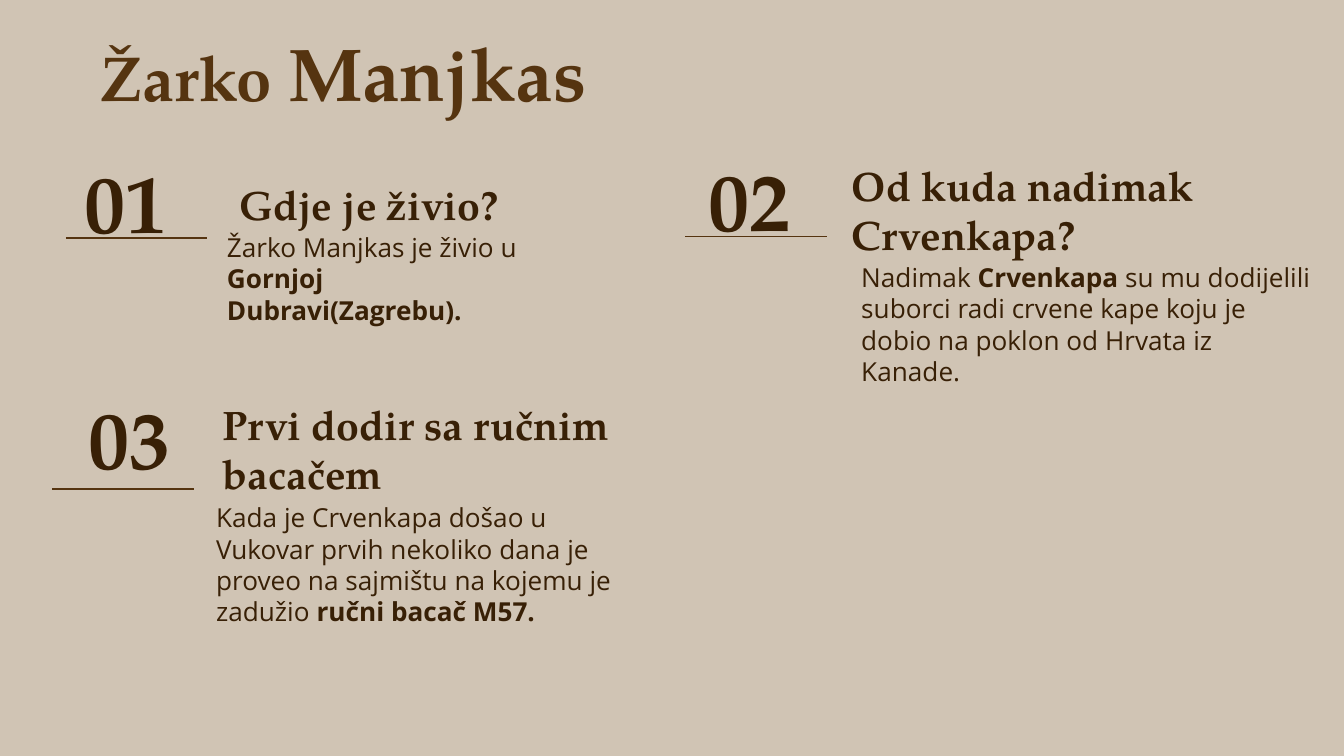
from lxml.etree import SubElement
from pptx import Presentation
from pptx.dml.color import RGBColor
from pptx.enum.shapes import MSO_CONNECTOR as CONNECTOR
from pptx.enum.text import MSO_ANCHOR as ANCHOR, PP_ALIGN as ALIGN
from pptx.oxml.ns import qn
from pptx.util import Inches, Pt

COLORS = {"background": "D0C4B4", "accent": "553410", "text": "382006"}
SERIF, SANS = "TeX Gyre Pagella", "Open Sans"

# Content: runs are (text, size, bold); places are left, top, width in inches
TITLE = [("Žarko ", 34, True), ("Manjkas", 40, True)]
SECTIONS = [
    {
        "number": "01", "number_at": (0.36, 0.92), "rule_at": (0.49, 1.77),
        "heading": "Gdje je živio?", "heading_at": (1.68, 1.23, 2.71),
        "body": [("Žarko Manjkas je živio u ", 14, False),
                 ("Gornjoj Dubravi(Zagrebu).", 14, True)],
        "body_at": (1.59, 1.78, 2.71),
    },
    {
        "number": "02", "number_at": (5, 0.9), "rule_at": (5.1, 1.76),
        "heading": "Od kuda nadimak Crvenkapa?", "heading_at": (6.24, 1.27, 4.11),
        "body": [("Nadimak ", 14, False), ("Crvenkapa", 14, True),
                 (" su mu dodijelili suborci radi crvene kape koju je dobio "
                  "na poklon od Hrvata iz Kanade.", 14, False)],
        "body_at": (6.31, 2.12, 3.6),
    },
    {
        "number": "03", "number_at": (0.39, 2.67), "rule_at": (0.39, 3.64),
        "heading": "Prvi dodir sa ručnim bacačem", "heading_at": (1.56, 3.05, 3.72),
        "body": [("Kada je Crvenkapa došao u Vukovar prvih nekoliko dana je "
                  "proveo na sajmištu na kojemu je zadužio ", 14, False),
                 ("ručni bacač M57.", 14, True)],
        "body_at": (1.51, 3.91, 3.43),
    },
]
SLIDE_WIDTH = 10
SLIDE_HEIGHT = SLIDE_WIDTH * 9 / 16
NUMBER_SIDE, TEXT_HEIGHT, RULE_LENGTH = 1.15, 0.58, 1.05


def add_text(slide, place, runs, font, color="text", align=ALIGN.LEFT, anchor=ANCHOR.MIDDLE):
    box = slide.shapes.add_textbox(*(Inches(v) for v in place))
    frame = box.text_frame
    frame.word_wrap = True
    frame.vertical_anchor = anchor
    frame.margin_left = frame.margin_right = Inches(0.1)
    frame.margin_top = frame.margin_bottom = Inches(0.1)
    paragraph = frame.paragraphs[0]
    paragraph.alignment = align
    for text, size, bold in runs:
        run = paragraph.add_run()
        run.text = text
        run.font.name = font
        run.font.size = Pt(size)
        run.font.bold = bold
        run.font.color.rgb = RGBColor.from_string(COLORS[color])


def add_rule(slide, left, top):
    rule = slide.shapes.add_connector(
        CONNECTOR.STRAIGHT, Inches(left), Inches(top), Inches(left + RULE_LENGTH), Inches(top))
    rule.line.color.rgb = RGBColor.from_string(COLORS["accent"])
    rule.line.width = Pt(0.75)
    SubElement(rule.element.spPr, qn("a:effectLst"))


prs = Presentation()
prs.slide_width, prs.slide_height = Inches(SLIDE_WIDTH), Inches(SLIDE_HEIGHT)
slide = prs.slides.add_slide(prs.slide_layouts[6])
slide.background.fill.solid()
slide.background.fill.fore_color.rgb = RGBColor.from_string(COLORS["background"])

# Title
add_text(slide, (-1.66, 0.1, 8.43, 0.63), TITLE, SERIF, "accent", ALIGN.CENTER, ANCHOR.TOP)

# Numbered sections
for section in SECTIONS:
    add_text(slide, (*section["number_at"], NUMBER_SIDE, NUMBER_SIDE),
             [(section["number"], 44, True)], SERIF, align=ALIGN.CENTER)
    add_text(slide, (*section["heading_at"], TEXT_HEIGHT),
             [(section["heading"], 22, True)], SERIF)
    add_text(slide, (*section["body_at"], TEXT_HEIGHT), section["body"], SANS)
    add_rule(slide, *section["rule_at"])

prs.save("out.pptx")
